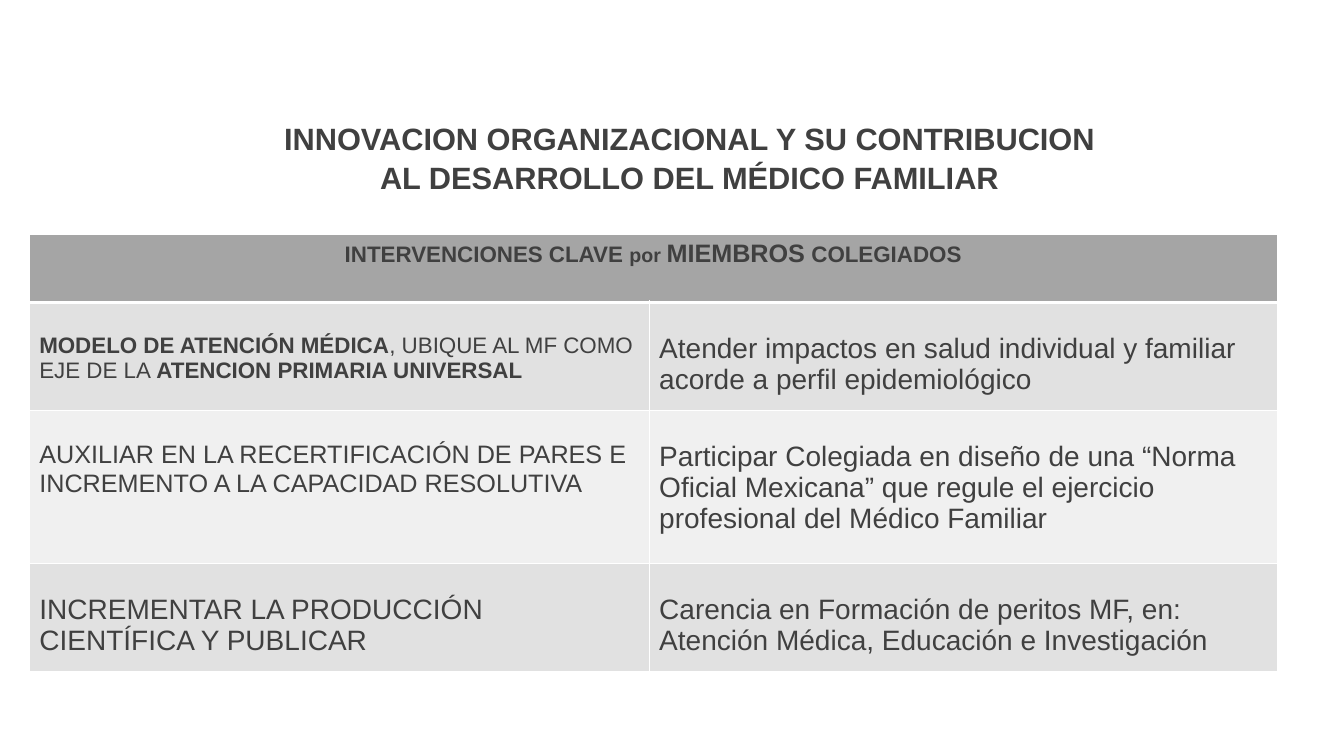
"""Build a slide with a title and a table of key interventions."""
from dataclasses import dataclass

from lxml.etree import SubElement
from pptx import Presentation
from pptx.dml.color import RGBColor as Rgb
from pptx.enum.text import MSO_ANCHOR as Anchor, PP_ALIGN as Align
from pptx.oxml.ns import qn
from pptx.table import Table, _Cell as Cell
from pptx.text.text import _Paragraph as Para
from pptx.util import Pt

INK, WHITE, HEAD, DARK, LIGHT = "404040", "FFFFFF", "A5A5A5", "E1E1E1", "F0F0F0"
COLS = (442.8, 448.56)
ROWS = (48.24, 77.04, 109.44, 77.04)
TITLE = ("INNOVACION ORGANIZACIONAL Y SU CONTRIBUCION", "AL DESARROLLO DEL MÉDICO FAMILIAR")


@dataclass
class Run:
    text: str
    size: float
    bold: bool = False


@dataclass
class Entry:
    row: int
    col: int
    fill: str
    runs: list[Run]


ENTRIES = [
    Entry(0, 0, HEAD, [
        Run("INTERVENCIONES CLAVE ", 16, True), Run("por ", 14, True),
        Run("MIEMBROS", 18, True), Run(" COLEGIADOS", 16, True)]),
    Entry(1, 0, DARK, [
        Run("MODELO DE ATENCIÓN MÉDICA", 16, True),
        Run(", UBIQUE AL MF COMO EJE DE LA", 16),
        Run(" ATENCION PRIMARIA UNIVERSAL", 16, True)]),
    Entry(1, 1, DARK, [Run(
        "Atender impactos en salud individual y familiar acorde a perfil epidemiológico", 20)]),
    Entry(2, 0, LIGHT, [Run(
        "AUXILIAR EN LA RECERTIFICACIÓN DE PARES E INCREMENTO A LA CAPACIDAD RESOLUTIVA", 18)]),
    Entry(2, 1, LIGHT, [Run(
        "Participar Colegiada en diseño de una “Norma Oficial Mexicana” que regule "
        "el ejercicio profesional del Médico Familiar", 20)]),
    Entry(3, 0, DARK, [Run("INCREMENTAR LA PRODUCCIÓN CIENTÍFICA Y PUBLICAR", 20)]),
    Entry(3, 1, DARK, [Run(
        "Carencia en Formación de peritos MF, en: "
        "Atención Médica, Educación e Investigación", 20)]),
]


def paint(fill, color: str) -> None:
    fill.solid()
    fill.fore_color.rgb = Rgb.from_string(color)


def write(para: Para, runs: list[Run], align: Align) -> None:
    para.alignment = align
    for item in runs:
        run = para.add_run()
        run.text = item.text
        for name, value in {"name": "Arial", "size": Pt(item.size), "bold": item.bold}.items():
            setattr(run.font, name, value)
        paint(run.font.fill, INK)


def edge(cell: Cell, base: float) -> None:
    props = cell._tc.get_or_add_tcPr()
    for side, width in {"L": 1, "R": 1, "T": 1, "B": base}.items():
        line = SubElement(props, qn(f"a:ln{side}"), w=str(Pt(width)))
        solid = SubElement(line, qn("a:solidFill"))
        SubElement(solid, qn("a:srgbClr"), val=WHITE)


def fill_cell(table: Table, entry: Entry) -> None:
    cell = table.cell(entry.row, entry.col)
    top = entry.row == 0
    cell.margin_top = Pt(3.6 if top else 22)
    paint(cell.fill, entry.fill)
    write(cell.text_frame.paragraphs[0], entry.runs, Align.CENTER if top else Align.LEFT)


def add_grid(slide) -> None:
    shape = slide.shapes.add_table(
        len(ROWS), len(COLS), Pt(20.88), Pt(167.76), Pt(sum(COLS)), Pt(sum(ROWS)))
    table = shape.table
    for col, width in zip(table.columns, COLS):
        col.width = Pt(width)
    for index, (row, height) in enumerate(zip(table.rows, ROWS)):
        row.height = Pt(height)
        for cell in row.cells:
            edge(cell, 1 if index else 3)
    table.cell(0, 0).merge(table.cell(0, 1))
    for entry in ENTRIES:
        fill_cell(table, entry)


def add_title(slide) -> None:
    title = slide.shapes.title
    place = {"left": 75.6, "top": 82.08, "width": 833.76, "height": 60.48}
    for name, value in place.items():
        setattr(title, name, Pt(value))
    frame = title.text_frame
    for name, value in {"word_wrap": True, "vertical_anchor": Anchor.TOP}.items():
        setattr(frame, name, value)
    for index, text in enumerate(TITLE):
        para = frame.add_paragraph() if index else frame.paragraphs[0]
        para.space_before = Pt(index)
        write(para, [Run(text, 22, True)], Align.CENTER)


def main() -> None:
    deck = Presentation()
    deck.slide_width, deck.slide_height = Pt(960), Pt(540)
    slide = deck.slides.add_slide(deck.slide_layouts[5])
    paint(slide.background.fill, WHITE)
    add_grid(slide)
    add_title(slide)
    deck.save("out.pptx")


if __name__ == "__main__":
    main()
